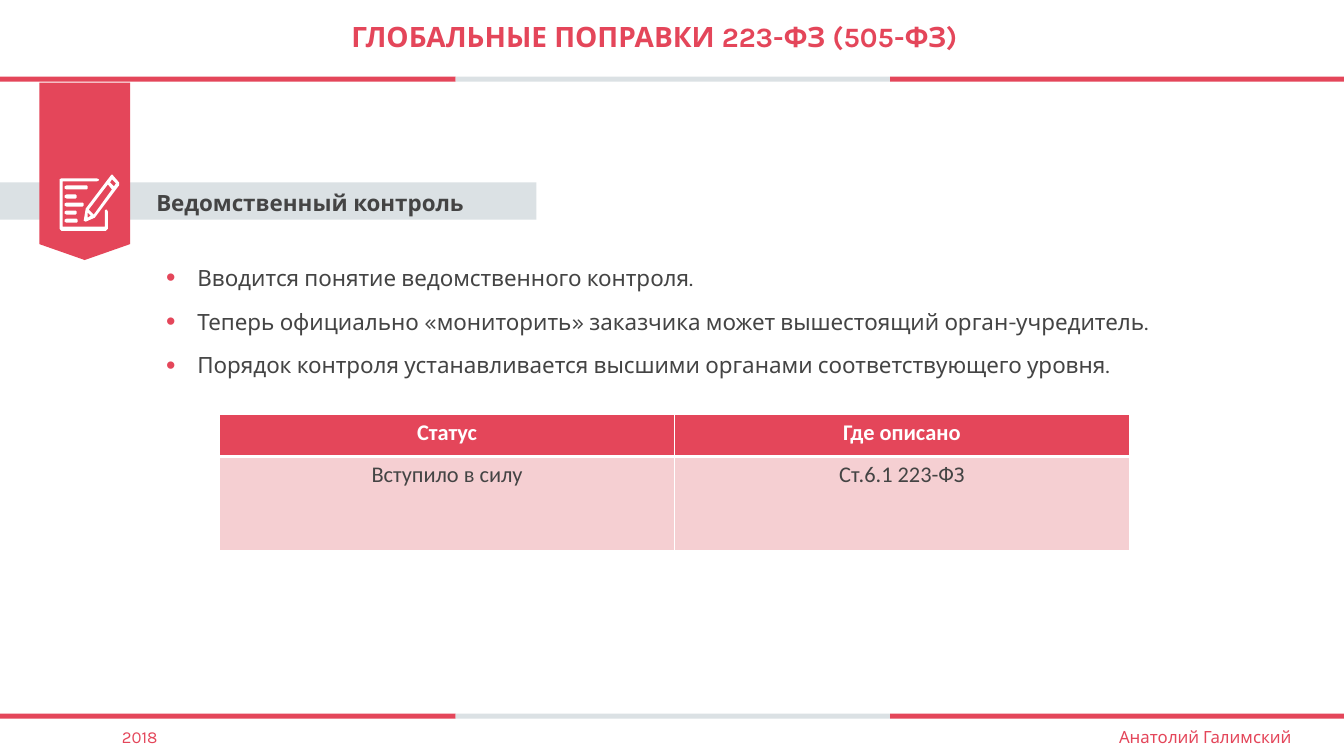
"""Build the slide about departmental control under law 223-ФЗ."""
from lxml import etree
from pptx import Presentation
from pptx.dml.color import RGBColor
from pptx.enum.shapes import MSO_SHAPE
from pptx.enum.text import MSO_ANCHOR, PP_ALIGN
from pptx.oxml.ns import qn
from pptx.util import Pt

PX = 9144
RED = RGBColor(0xE4, 0x46, 0x5A)
PALE_RED = RGBColor(0xF5, 0xCF, 0xD2)
GREY = RGBColor(0xDB, 0xE1, 0xE4)
DARK = RGBColor(0x44, 0x44, 0x44)
WHITE = RGBColor(0xFF, 0xFF, 0xFF)
RECTANGLE, PENTAGON = MSO_SHAPE.RECTANGLE, MSO_SHAPE.PENTAGON
LEFT, CENTER, JUSTIFY = PP_ALIGN.LEFT, PP_ALIGN.CENTER, PP_ALIGN.JUSTIFY
MIDDLE = MSO_ANCHOR.MIDDLE

deck = Presentation()
deck.slide_width, deck.slide_height = 1333 * PX, 750 * PX
page = deck.slides.add_slide(deck.slide_layouts[6])


def add_block(kind, left, top, width, height, color):
    block = page.shapes.add_shape(kind, left * PX, top * PX, width * PX, height * PX)
    block.shadow.inherit = False
    block.fill.solid()
    block.fill.fore_color.rgb = color
    block.line.fill.background()
    return block


def add_text(left, top, width, height, lines, size, color, align, bold=False):
    box = page.shapes.add_textbox(left * PX, top * PX, width * PX, height * PX)
    frame = box.text_frame
    frame.word_wrap = True
    frame.text = "\n".join(lines)
    for para in frame.paragraphs:
        para.alignment = align
        para.font.name = "Karla"
        para.font.size = Pt(size)
        para.font.bold = bold
        para.font.color.rgb = color
    return frame


for stripe_top in (76, 708):
    for left, right, color in ((0, 452, RED), (452, 883, GREY), (883, 1333, RED)):
        add_block(RECTANGLE, left, stripe_top, right - left, 5, color)

add_block(RECTANGLE, 0, 181, 532, 37, GREY)
ribbon = add_block(PENTAGON, -4, 125, 176, 90, RED)
ribbon.adjustments[0] = 0.175
ribbon.rotation = 90

heading = add_text(155, 188, 485, 27, ["Ведомственный контроль"], 16, DARK, LEFT, True)
heading.margin_left = heading.margin_top = heading.margin_right = heading.margin_bottom = 0

title = add_text(197, 0, 904, 76, ["ГЛОБАЛЬНЫЕ ПОПРАВКИ 223-ФЗ (505-ФЗ)"], 20, RED, CENTER, True)
title.vertical_anchor = MIDDLE
title.paragraphs[0].line_spacing = 0.9

points = add_text(155, 257, 1131, 125, [
    "Вводится понятие ведомственного контроля.",
    "Теперь официально «мониторить» заказчика может вышестоящий орган-учредитель.",
    "Порядок контроля устанавливается высшими органами соответствующего уровня.",
], 16, DARK, JUSTIFY)
for index, para in enumerate(points.paragraphs):
    properties = para._p.get_or_add_pPr()
    properties.set("marL", str(31 * PX))
    properties.set("indent", str(-31 * PX))
    bullet_color = etree.Element(qn("a:buClr"))
    etree.SubElement(bullet_color, qn("a:srgbClr"), val=str(RED))
    bullet_parts = (
        bullet_color,
        etree.Element(qn("a:buSzPct"), val="120000"),
        etree.Element(qn("a:buFont"), typeface="Arial"),
        etree.Element(qn("a:buChar"), char="•"),
    )
    defaults = properties.find(qn("a:defRPr"))
    for part in bullet_parts:
        defaults.addprevious(part)
    if index:
        para.space_before = Pt(12)

icon_outlines = [
    [(112, 174), (118, 181), (118, 184), (94, 216), (85, 220), (83, 219),
     (85, 207), (110, 174), (111, 173)],
    [(96, 177), (98, 178), (98, 179), (96, 180), (62, 180), (62, 225), (104, 225),
     (104, 209), (105, 208), (106, 208), (107, 210), (107, 227), (105, 229),
     (61, 229), (59, 227), (59, 178), (61, 177)],
    [(88, 208), (93, 213), (111, 188), (107, 183)],
    [(90, 214), (87, 211), (87, 216)],
    [(115, 182), (111, 178), (109, 181), (113, 185)],
]
for top, right in ((184, 87), (193, 76), (201, 83), (209, 76), (217, 77)):
    bottom = top + 4
    icon_outlines.append([
        (66, top), (right - 1, top), (right, top + 1), (right, bottom - 1),
        (right - 1, bottom), (66, bottom), (64, bottom - 1), (64, top + 1),
    ])
builder = page.shapes.build_freeform(*icon_outlines[0][0], scale=PX)
for outline in icon_outlines:
    if outline is not icon_outlines[0]:
        builder.move_to(*outline[0])
    builder.add_line_segments(outline[1:], close=True)
icon = builder.convert_to_shape()
icon.shadow.inherit = False
icon.fill.solid()
icon.fill.fore_color.rgb = WHITE
icon.line.fill.background()

table = page.shapes.add_table(2, 2, 218 * PX, 411 * PX, 902 * PX, 135 * PX).table
rows = (
    (42, ("Статус", "Где описано"), RED, WHITE, True, 3),
    (93, ("Вступило в силу", "Ст.6.1 223-ФЗ"), PALE_RED, DARK, False, 1),
)
for row, (height, texts, fill, color, bold, bottom_width) in enumerate(rows):
    table.rows[row].height = height * PX
    for column, text in enumerate(texts):
        cell = table.cell(row, column)
        cell.text = text
        para = cell.text_frame.paragraphs[0]
        para.alignment = CENTER
        para.font.name = "Calibri"
        para.font.size = Pt(16)
        para.font.bold = bold
        para.font.color.rgb = color
        cell_properties = cell._tc.get_or_add_tcPr()
        for side, width in (("L", 1), ("R", 1), ("T", 1), ("B", bottom_width)):
            border = etree.SubElement(cell_properties, qn("a:ln" + side), w=str(Pt(width)))
            border_fill = etree.SubElement(border, qn("a:solidFill"))
            etree.SubElement(border_fill, qn("a:srgbClr"), val=str(WHITE))
        cell.fill.solid()
        cell.fill.fore_color.rgb = fill

for left, text in ((0, "2018"), (1057, "Анатолий Галимский")):
    add_text(left, 716, 277, 30, [text], 12, RED, CENTER)

deck.save("out.pptx")
